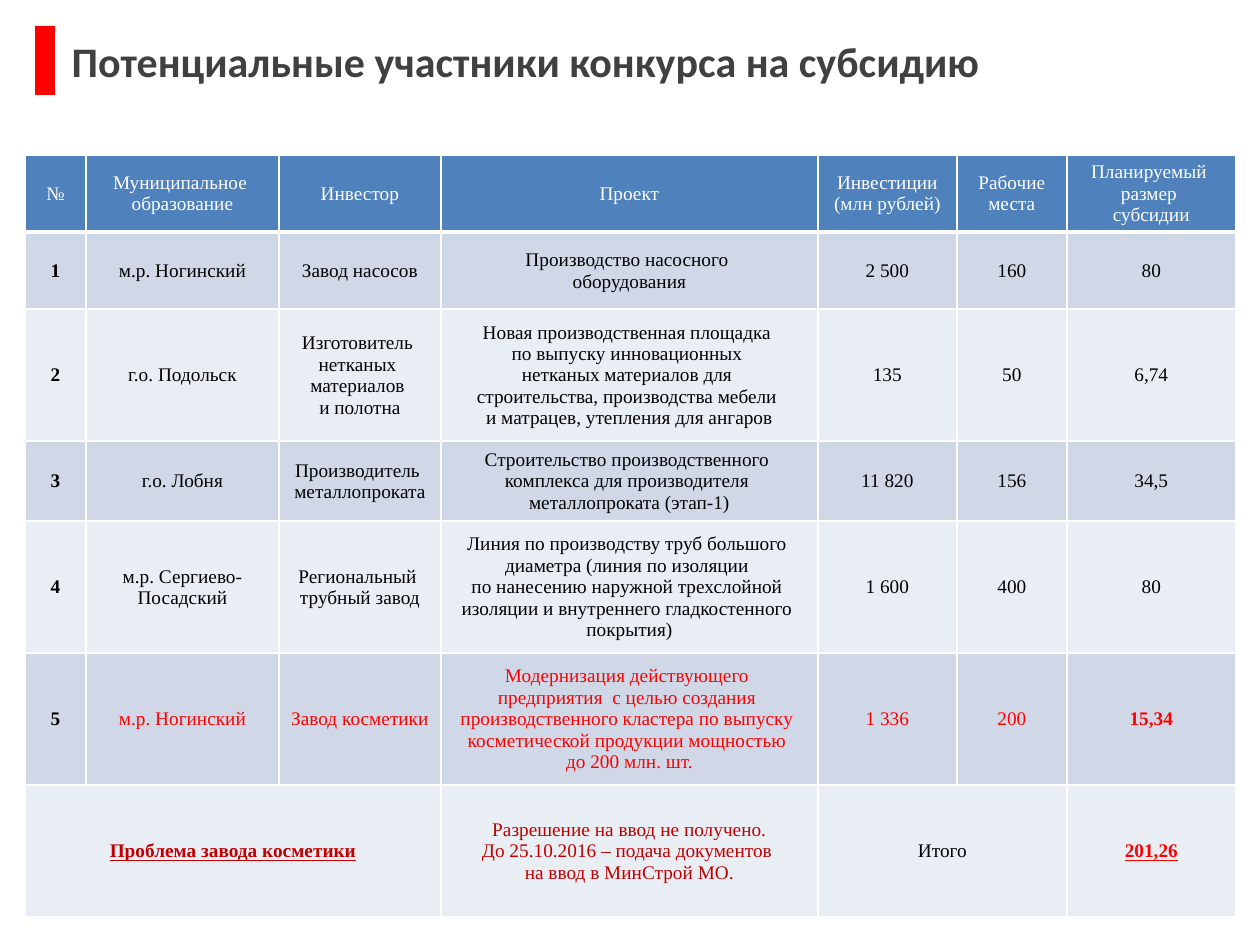
from copy import deepcopy

from lxml import etree
from pptx import Presentation
from pptx.dml.color import RGBColor
from pptx.enum.shapes import MSO_SHAPE
from pptx.enum.text import MSO_ANCHOR, MSO_AUTO_SIZE, PP_ALIGN
from pptx.oxml.ns import qn
from pptx.util import Emu, Pt

RECTANGLE = MSO_SHAPE.RECTANGLE
MIDDLE = MSO_ANCHOR.MIDDLE
NO_AUTOFIT = MSO_AUTO_SIZE.NONE
LEFT, CENTER = PP_ALIGN.LEFT, PP_ALIGN.CENTER
PX = Emu(914400) / 126
TITLE_ONLY = 5

COLORS = {
    "white": "FFFFFF",
    "black": "000000",
    "title": "404040",
    "header": "4F81BD",
    "band_dark": "D0D8E8",
    "band_light": "E9EDF4",
    "red": "FF0000",
    "dark_red": "C00000",
}


def write_text(text_frame, text, font="Times New Roman", size=11, color="black",
               bold=False, underline=False, align=CENTER):
    text_frame.text = text
    for paragraph in text_frame.paragraphs:
        paragraph.alignment = align
        for run in paragraph.runs:
            run.font.name = font
            run.font.size = Pt(size)
            run.font.bold = bold
            run.font.underline = underline
            run.font.color.rgb = RGBColor.from_string(COLORS[color])
        for line_break in paragraph._p.findall(qn("a:br")):
            line_break.insert(0, deepcopy(paragraph.runs[0].font._element))


def draw_borders(cell, bottom_width):
    properties = cell._tc.get_or_add_tcPr()
    widths = {"a:lnL": 1, "a:lnR": 1, "a:lnT": 1, "a:lnB": bottom_width}
    for position, (tag, width) in enumerate(widths.items()):
        line = etree.Element(qn(tag), w=str(Pt(width)))
        fill = etree.SubElement(line, qn("a:solidFill"))
        etree.SubElement(fill, qn("a:srgbClr"), val=COLORS["white"])
        properties.insert(position, line)


presentation = Presentation()
presentation.slide_width = round(1260 * PX)
presentation.slide_height = round(945 * PX)
slide = presentation.slides.add_slide(presentation.slide_layouts[TITLE_ONLY])

title = slide.shapes.title
title.left, title.top, title.width, title.height = [round(v * PX) for v in (59, 26, 1166, 69)]
write_text(title.text_frame, "Потенциальные участники конкурса на субсидию",
           font="Calibri", size=24, color="title", bold=True, align=LEFT)
title.text_frame.vertical_anchor = MIDDLE
title.text_frame.auto_size = NO_AUTOFIT

marker = slide.shapes.add_shape(RECTANGLE, *[round(v * PX) for v in (35, 26, 20, 69)])
marker.shadow.inherit = False
marker.fill.solid()
marker.fill.fore_color.rgb = RGBColor.from_string(COLORS["red"])
marker.line.fill.background()

column_widths = [61, 193, 162, 377, 139, 110, 169]
row_heights = [72, 77, 132, 80, 132, 132, 132]
rows = [
    ["№", "Муниципальное \nобразование", "Инвестор", "Проект", "Инвестиции\n(млн рублей)",
     "Рабочие\nместа", "Планируемый \vразмер \vсубсидии"],
    ["1", "м.р. Ногинский", "Завод насосов", "Производство насосного \vоборудования",
     "2 500", "160", "80"],
    ["2", "г.о. Подольск", "Изготовитель \nнетканых \vматериалов \nи полотна",
     "Новая производственная площадка \nпо выпуску инновационных \n"
     "нетканых материалов для \nстроительства, производства мебели \v"
     "и матрацев, утепления для ангаров",
     "135", "50", "6,74"],
    ["3", "г.о. Лобня", "Производитель \vметаллопроката",
     "Строительство производственного \nкомплекса для производителя \nметаллопроката (этап-1)",
     "11 820", "156", "34,5"],
    ["4", "м.р. Сергиево-\vПосадский", "Региональный \vтрубный завод",
     "Линия по производству труб большого \vдиаметра (линия по изоляции \n"
     "по нанесению наружной трехслойной \nизоляции и внутреннего гладкостенного \nпокрытия)",
     "1 600", "400", "80"],
    ["5", "м.р. Ногинский", "Завод косметики",
     "Модернизация действующего \vпредприятия  с целью создания \v"
     "производственного кластера по выпуску \vкосметической продукции мощностью \v"
     "до 200 млн. шт.",
     "1 336", "200", "15,34"],
    ["Проблема завода косметики", "", "",
     "Разрешение на ввод не получено.\nДо 25.10.2016 – подача документов \vна ввод в МинСтрой МО.",
     "Итого", "", "201,26"],
]
last_row = len(rows) - 1
special_formats = {(5, column): {"color": "red"} for column in range(1, 6)}
special_formats.update({
    (5, 6): {"color": "red", "bold": True},
    (last_row, 0): {"color": "dark_red", "bold": True, "underline": True},
    (last_row, 3): {"color": "dark_red"},
    (last_row, 6): {"color": "red", "bold": True, "underline": True},
})

table = slide.shapes.add_table(
    len(rows), len(column_widths), round(25 * PX), round(155 * PX),
    round(sum(column_widths) * PX), round(sum(row_heights) * PX)).table
for column, width in zip(table.columns, column_widths):
    column.width = round(width * PX)
for row, height in zip(table.rows, row_heights):
    row.height = round(height * PX)
for first, last in ((0, 2), (4, 5)):
    table.cell(last_row, first).merge(table.cell(last_row, last))

for row_index, texts in enumerate(rows):
    is_header = row_index == 0
    band = "header" if is_header else "band_dark" if row_index % 2 else "band_light"
    for column_index, text in enumerate(texts):
        cell = table.cell(row_index, column_index)
        cell.fill.solid()
        cell.fill.fore_color.rgb = RGBColor.from_string(COLORS[band])
        draw_borders(cell, 3 if is_header else 1)
        cell.vertical_anchor = MIDDLE
        if not is_header:
            cell.margin_left = cell.margin_top = cell.margin_right = round(PX)
            cell.margin_bottom = 0
        if cell.is_spanned:
            continue
        default_format = {"color": "white"} if is_header else {"bold": column_index == 0}
        write_text(cell.text_frame, text,
                   **special_formats.get((row_index, column_index), default_format))

presentation.save("out.pptx")
